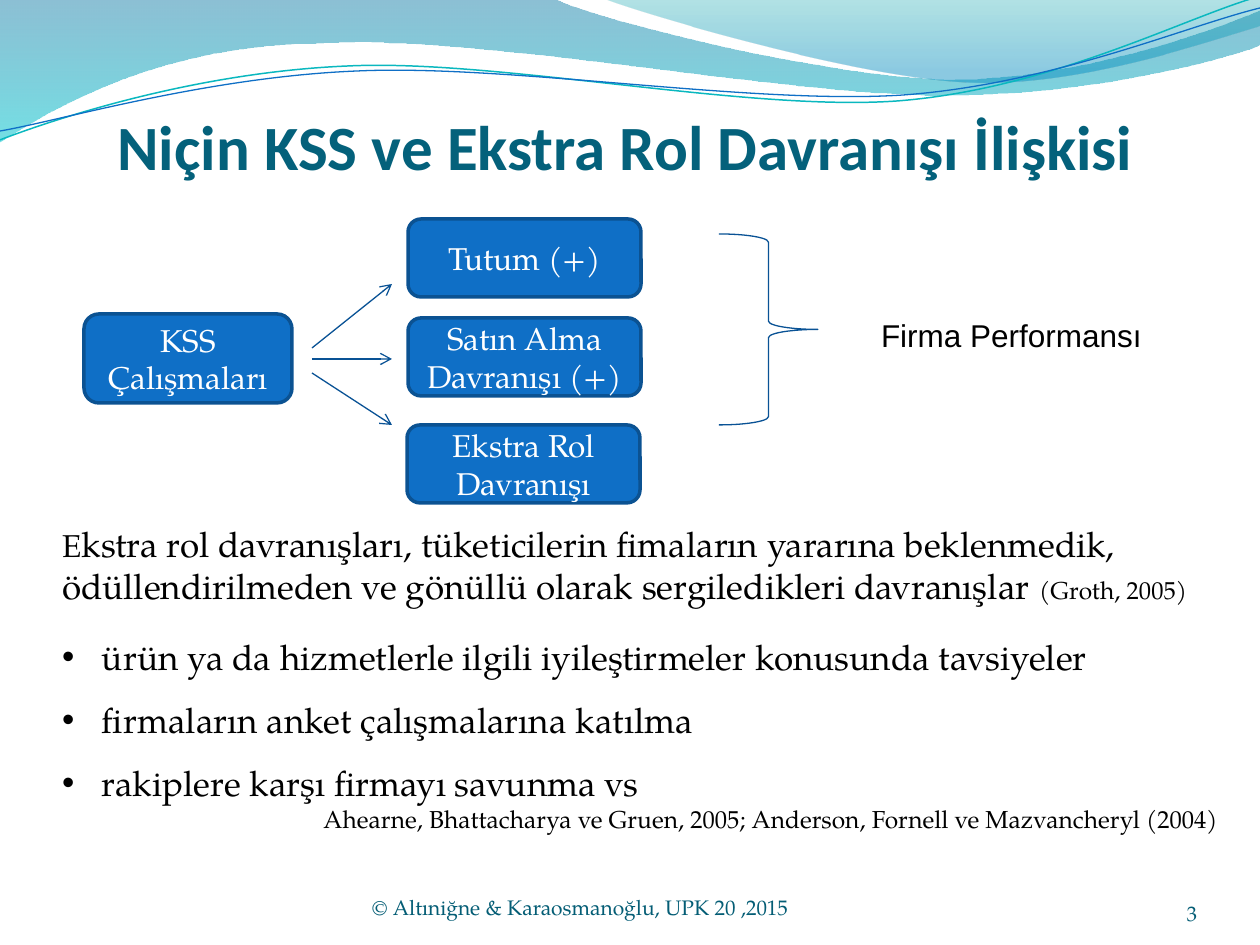
import math
import pptx
import pptx.util
import pptx.dml.color
import pptx.enum.shapes
import pptx.enum.text
import lxml.etree

THEME = {
    "blue": "0F6FC6", "edge": "0B5292", "line": "095295", "teal": "0AB8BF",
    "title": "04617B", "foot": "045D75", "white": "FFFFFF", "black": "000000",
    "serif": "TeX Gyre Pagella", "sans": "Arial", "head": "Calibri",
    "huge": 36, "big": 20, "mid": 18, "note": 14, "small": 12,
}
BANDS = [
    ([(0, -1), (554, -1), (600, 21, 837, 79, 955, 79),
      (1075, 79, 1207, 33, 1260, 11), (1261, 45),
      (1239, 55, 1096, 96, 940, 95), (781, 95, 481, 35, 324, 43),
      (163, 44, 58, 105, -1, 142), (0, -1)],
     [(0, "0074A1", 45), (1, "00C6CF", 55)]),
    ([(604, -1), (641, 14, 859, 78, 969, 82),
      (1079, 87, 1211, 40, 1260, 26), (1260, 0), (604, -1)],
     [(0, "00A1A9", 30), (0.8, "008BBF", 45)]),
]
TILT = -2.7
WAVES = [
    ([(0, 140), (60, 117, 199, 72, 349, 66), (498, 59, 747, 112, 898, 101),
      (1050, 89, 1182, 19, 1257, -3)], (629, 72), "teal", 0.85),
    ([(0, 131), (59, 121, 207, 77, 357, 71), (508, 64, 752, 105, 903, 95),
      (1053, 84, 1186, 26, 1260, 8)], (629, 74), "blue", 0.75),
]
BOXES = [
    ("KSS Çalışmaları", (84, 314, 208, 89)),
    ("Tutum (+)", (408, 219, 233, 78)),
    ("Satın Alma Davranışı (+)", (408, 318, 233, 78)),
    ("Ekstra Rol Davranışı", (407, 425, 233, 78)),
]
ARROWS = [(348, 284), (359, 359), (373, 425)]
BRACE = (719, 234, 99, 191)
LABELS = [
    ("Niçin KSS ve Ekstra Rol Davranışı İlişkisi", (25, 26, 1201, 157),
     "huge", "head", "title", "CENTER", "BOTTOM", (0, 6, 0, 0)),
    ("3", (1092, 876, 105, 50),
     "small", "serif", "foot", "RIGHT", "BOTTOM", (0, 0, 0, 0)),
    ("© Altıniğne & Karaosmanoğlu, UPK 20 ,2015", (372, 869, 462, 51),
     "small", "serif", "foot", "LEFT", "BOTTOM", (0, 0, 0, 0)),
    ("Firma Performansı", (868, 310, 297, 50),
     "mid", "sans", "black", "LEFT", "TOP", (13, 6, 13, 6)),
]
BODY = (49, 515, 1181, 364)
INTRO = [
    ("E", "mid"),
    ("kstra rol davranışları, tüketicilerin fimaların yararına beklenmedik, "
     "ödüllendirilmeden ve gönüllü olarak sergiledikleri davranışlar ", "big"),
    ("(Groth, 2005)", "note"),
]
POINTS = [
    ("ürün ya da hizmetlerle ilgili iyileştirmeler konusunda tavsiyeler", 16.5),
    ("firmaların anket çalışmalarına katılma", 12),
    ("rakiplere karşı firmayı savunma vs", 12),
]
SOURCE = "Ahearne, Bhattacharya ve Gruen, 2005; Anderson, Fornell ve Mazvancheryl (2004)"

SCALE = 914400 / 126
ALIGN = pptx.enum.text.PP_ALIGN
ANCHOR = pptx.enum.text.MSO_ANCHOR
FORM = pptx.enum.shapes.MSO_SHAPE


def px(*nums):
    return [pptx.util.Emu(round(n * SCALE)) for n in nums]


def tone(name):
    return pptx.dml.color.RGBColor.from_string(THEME.get(name, name))


def put(obj, vals):
    for key, val in vals.items():
        setattr(obj, key, val)


def tag(node, name, **vals):
    return lxml.etree.SubElement(node, pptx.oxml.ns.qn(name), **vals)


def stroke(shape, color, width):
    shape.line.color.rgb = tone(color)
    shape.line.width = pptx.util.Pt(width)


def turn(segs, mid, angle):
    cos, sin = math.cos(math.radians(angle)), math.sin(math.radians(angle))
    out = []
    for seg in segs:
        spot = []
        for x, y in zip(seg[::2], seg[1::2]):
            dx, dy = x - mid[0], y - mid[1]
            spot += [mid[0] + dx * cos - dy * sin, mid[1] + dx * sin + dy * cos]
        out.append(tuple(spot))
    return out


def curve(shapes, segs, close):
    dots = [px(*seg[i:i + 2]) for seg in segs for i in range(0, len(seg), 2)]
    pen = shapes.build_freeform(*dots[0], scale=1.0)
    pen.add_line_segments(dots[1:], close=close)
    shape = pen.convert_to_shape()
    shape.shadow.inherit = False
    steps = iter(list(shape.element.spPr.iter(pptx.oxml.ns.qn("a:lnTo"))))
    for seg in segs[1:]:
        lines = [next(steps) for _ in seg[::2]]
        if len(lines) == 3:
            bend = lxml.etree.Element(pptx.oxml.ns.qn("a:cubicBezTo"))
            lines[0].addprevious(bend)
            for line in lines:
                bend.append(line[0])
                line.getparent().remove(line)
    return shape


def write(para, text, size, font="serif", color="black"):
    run = para.add_run()
    run.text = text
    put(run.font, {"size": pptx.util.Pt(THEME[size]), "name": THEME[font],
                   "bold": size == "huge"})
    run.font.color.rgb = tone(color)


def frame(shape, anchor, gaps=(13, 6, 13, 6)):
    left, top, right, base = px(*gaps)
    put(shape.text_frame, {
        "word_wrap": True, "vertical_anchor": ANCHOR[anchor],
        "margin_left": left, "margin_top": top,
        "margin_right": right, "margin_bottom": base})
    return shape.text_frame


def draw_waves(shapes):
    for segs, stops in BANDS:
        band = curve(shapes, segs, True)
        band.line.fill.background()
        band.fill.gradient()
        band.fill.gradient_angle = 270
        for stop, (place, color, alpha) in zip(band.fill.gradient_stops, stops):
            stop.position = place
            stop.color.rgb = tone(color)
        nodes = band.element.spPr.iter(pptx.oxml.ns.qn("a:srgbClr"))
        for node, stop in zip(list(nodes), stops):
            tag(node, "a:alpha", val=str(stop[2] * 1000))
    group = shapes.add_group_shape()
    for segs, mid, color, width in WAVES:
        wave = curve(group.shapes, turn(segs, mid, -TILT), False)
        wave.rotation = TILT
        wave.fill.background()
        stroke(wave, color, width)


def draw_flow(shapes):
    brace = shapes.add_shape(FORM.RIGHT_BRACE, *px(*BRACE))
    brace.shadow.inherit = False
    brace.fill.background()
    stroke(brace, "line", 0.75)
    for text, spot in BOXES:
        box = shapes.add_shape(FORM.ROUNDED_RECTANGLE, *px(*spot))
        box.shadow.inherit = False
        box.fill.solid()
        box.fill.fore_color.rgb = tone("blue")
        stroke(box, "edge", 2)
        para = frame(box, "MIDDLE").paragraphs[0]
        para.alignment = ALIGN.CENTER
        write(para, text, "mid", color="white")
    for start, end in ARROWS:
        arrow = shapes.add_connector(
            pptx.enum.shapes.MSO_CONNECTOR.STRAIGHT, *px(312, start, 392, end))
        stroke(arrow, "line", 0.75)
        line = arrow.element.spPr.find(pptx.oxml.ns.qn("a:ln"))
        tag(line, "a:tailEnd", type="arrow")
        tag(arrow.element.spPr, "a:effectLst")


def draw_text(shapes):
    for text, spot, size, font, color, align, anchor, gaps in LABELS:
        para = frame(shapes.add_textbox(*px(*spot)), anchor, gaps).paragraphs[0]
        para.alignment = ALIGN[align]
        write(para, text, size, font, color)
    body = frame(shapes.add_textbox(*px(*BODY)), "TOP", (13, 8, 11, 6))
    for text, size in INTRO:
        write(body.paragraphs[0], text, size)
    indent = px(40)[0]
    for text, space in POINTS:
        para = body.add_paragraph()
        para.space_before = pptx.util.Pt(space)
        props = para._p.get_or_add_pPr()
        props.set("marL", str(indent))
        props.set("indent", str(-indent))
        tag(props, "a:buFont", typeface=THEME["sans"])
        tag(props, "a:buChar", char="•")
        write(para, text, "big")
    para = body.add_paragraph()
    para.alignment = ALIGN.RIGHT
    write(para, SOURCE, "note")


def main():
    deck = pptx.Presentation()
    wide, high = px(1260, 945)
    put(deck, {"slide_width": wide, "slide_height": high})
    shapes = deck.slides.add_slide(deck.slide_layouts[6]).shapes
    for draw in (draw_waves, draw_text, draw_flow):
        draw(shapes)
    deck.save("out.pptx")


if __name__ == "__main__":
    main()
